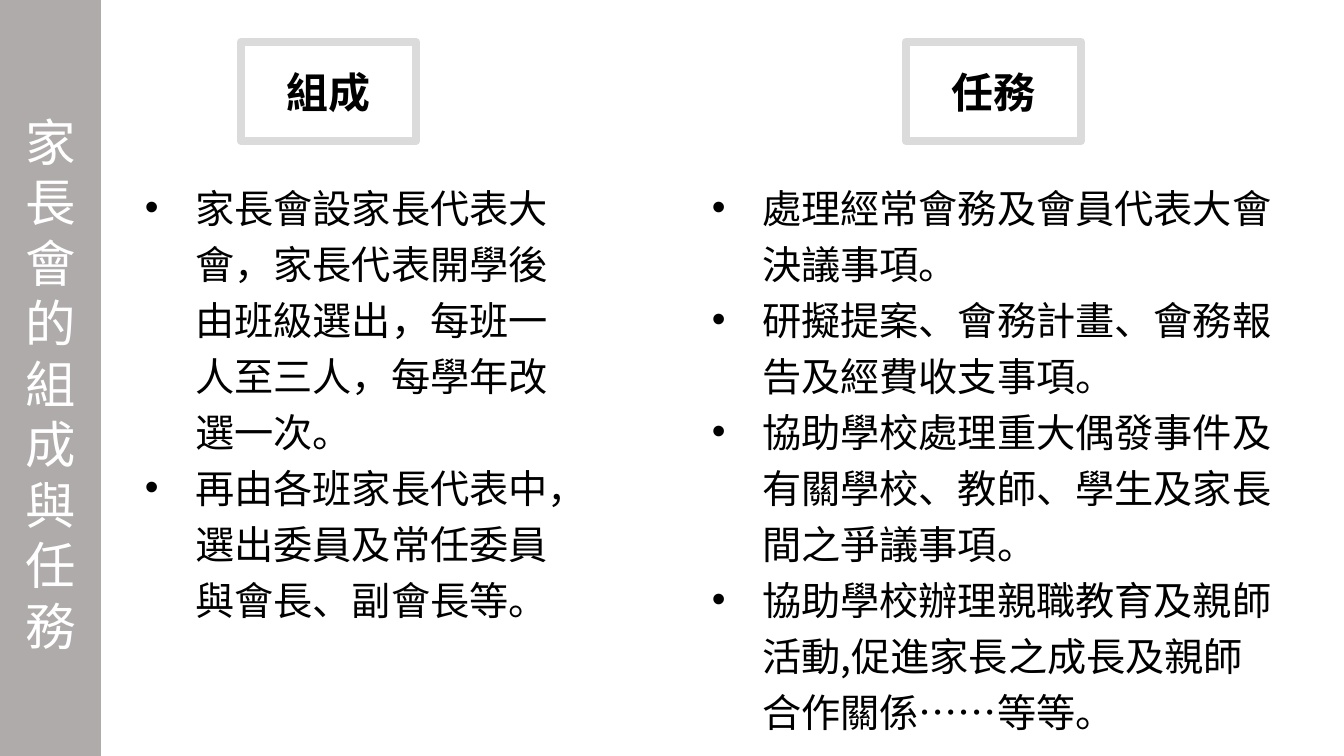
from lxml import etree
from pptx import Presentation
from pptx import util as u
from pptx.dml.color import RGBColor
from pptx.enum import shapes, text
from pptx.oxml import ns

FONT = "Noto Sans CJK SC"


def px(n):
    return u.Emu(round(n * 12192000 / 1344))


def style(para, size, color, bold=False):
    font = para.font
    font.name, font.size, font.bold = FONT, u.Pt(size), bold
    font.color.rgb = RGBColor.from_string(color)
    props = para._p.get_or_add_pPr().find(ns.qn("a:defRPr"))
    etree.SubElement(props, ns.qn("a:ea"), typeface=FONT)
    return props


deck = Presentation()
deck.slide_width, deck.slide_height = px(1344), px(756)
slide = deck.slides.add_slide(deck.slide_layouts[6])

boxes = [
    (0, 0, 101, 756, "家長會的組成與任務", 36, "FFFFFF", False),
    (241, 42, 175, 99, "組成", 30, "000000", True),
    (906, 42, 175, 99, "任務", 30, "000000", True),
]
for left, top, width, height, label, size, color, bold in boxes:
    box = slide.shapes.add_shape(
        shapes.MSO_SHAPE.RECTANGLE, px(left), px(top), px(width), px(height))
    box.shadow.inherit = False
    frame = box.text_frame
    frame.word_wrap = True
    frame.vertical_anchor = text.MSO_ANCHOR.MIDDLE
    para = frame.paragraphs[0]
    para.text = label
    para.alignment = text.PP_ALIGN.CENTER
    if bold:
        box.fill.background()
        box.line.color.rgb = RGBColor.from_string("DBDBDB")
        box.line.width = u.Pt(6)
    else:
        box.fill.solid()
        box.fill.fore_color.rgb = RGBColor.from_string("AFABAB")
        box.line.fill.background()
        frame.margin_top = px(15)
        para.line_spacing = u.Pt(43.2)
    style(para, size, color, bold)

lists = [
    (135, 431, 458, [
        "家長會設家長代表大會，家長代表開學後由班級選出，每班一人至三人，每學年改選一次。",
        "再由各班家長代表中，選出委員及常任委員與會長、副會長等。",
    ]),
    (702, 585, 571, [
        "處理經常會務及會員代表大會決議事項。",
        "研擬提案、會務計畫、會務報告及經費收支事項。",
        "協助學校處理重大偶發事件及有關學校、教師、學生及家長間之爭議事項。",
        "協助學校辦理親職教育及親師活動,促進家長之成長及親師合作關係……等等。",
    ]),
]
for left, width, height, items in lists:
    area = slide.shapes.add_textbox(px(left), px(170), px(width), px(height))
    frame = area.text_frame
    frame.word_wrap = True
    for i, item in enumerate(items):
        para = frame.add_paragraph() if i else frame.paragraphs[0]
        para.text = item
        para.line_spacing = u.Pt(40)
        props = style(para, 28, "000000")
        indent = para._p.get_or_add_pPr()
        indent.set("marL", str(u.Inches(0.5)))
        indent.set("indent", str(-u.Inches(0.5)))
        for tag, key, value in [("a:buFont", "typeface", "Arial"), ("a:buChar", "char", "•")]:
            mark = etree.Element(ns.qn(tag))
            mark.set(key, value)
            props.addprevious(mark)

deck.save("out.pptx")
